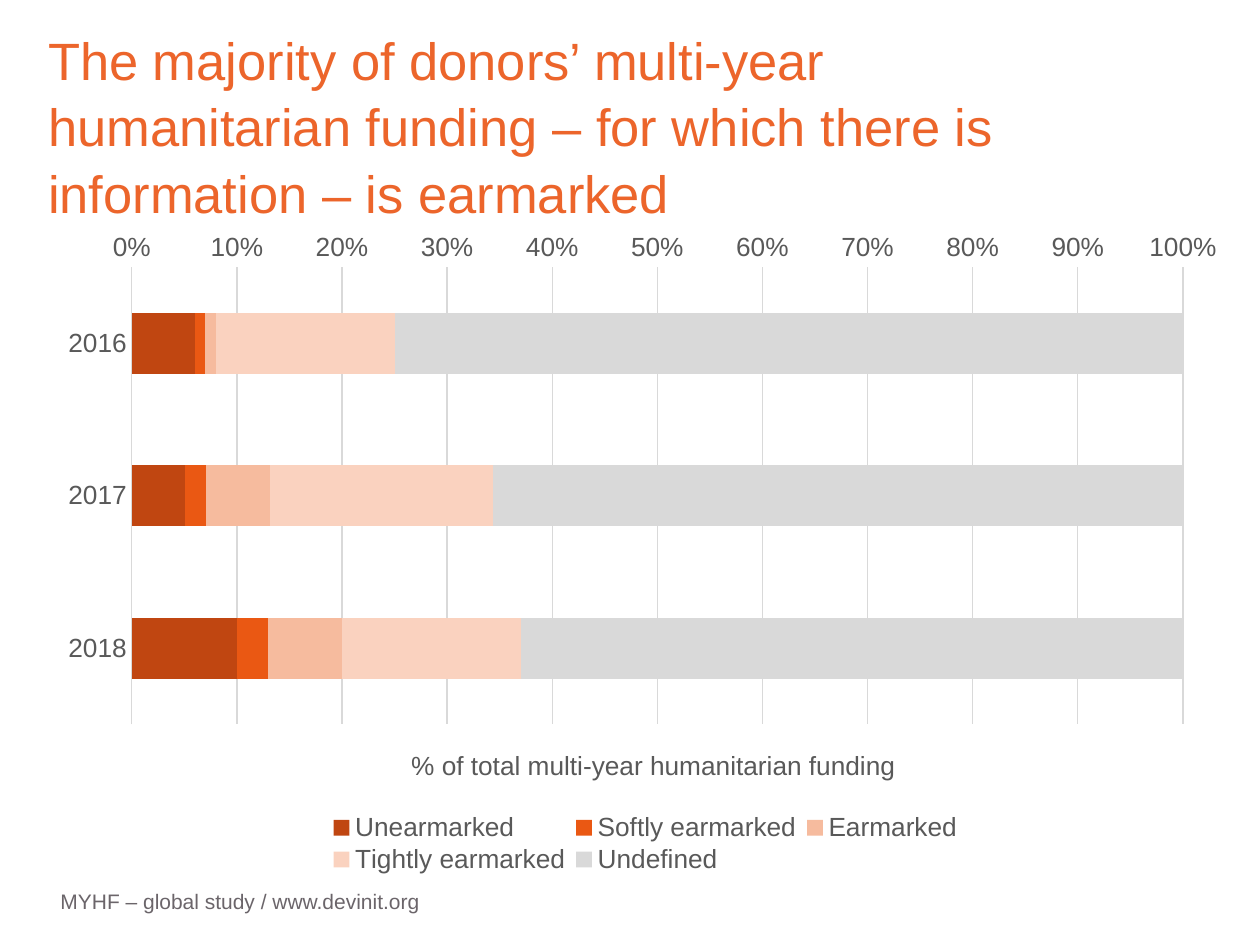
from lxml import etree
from pptx import Presentation, util as u
from pptx.chart.data import CategoryChartData
from pptx.dml.color import RGBColor
from pptx.enum import chart as charts, text
from pptx.oxml.ns import qn

FONT = "Arial"
GREY = "595959"
PALE_GREY = "D9D9D9"
YEARS = ["2016", "2017", "2018"]
FUNDING = [
    ("Unearmarked", (6, 5, 10), "C04611"),
    ("Softly earmarked", (1, 2, 3), "EA5813"),
    ("Earmarked", (1, 6, 7), "F6BB9E"),
    ("Tightly earmarked", (17, 21, 17), "FAD2BF"),
    ("Undefined", (75, 65, 63), PALE_GREY),
]


def colour(value):
    return RGBColor.from_string(value)


def assign(target, **values):
    for name, value in values.items():
        setattr(target, name, value)


def style_font(font, size, hex_value):
    assign(font, name=FONT, size=u.Pt(size), bold=False)
    font.color.rgb = colour(hex_value)


def style_line(line, hex_value):
    line.width = u.Pt(0.75)
    line.color.rgb = colour(hex_value)


def place_part(element, index, **fractions):
    """Fix a chart part at fractions of the chart area."""
    for old in element.findall(qn("c:layout")):
        element.remove(old)
    layout = etree.Element(qn("c:layout"))
    manual = etree.SubElement(layout, qn("c:manualLayout"))
    if "w" in fractions and index == 0:
        etree.SubElement(manual, qn("c:layoutTarget")).set("val", "inner")
    for mode in ("xMode", "yMode"):
        etree.SubElement(manual, qn("c:" + mode)).set("val", "edge")
    for name, value in fractions.items():
        etree.SubElement(manual, qn("c:" + name)).set("val", str(value))
    element.insert(index, layout)


def add_text(page, box, words, size, hex_value, line_spacing=1.0, **frame_format):
    frame = page.shapes.add_textbox(*map(u.Cm, box)).text_frame
    assign(frame, word_wrap=True, **frame_format)
    para = frame.paragraphs[0]
    para.line_spacing = line_spacing
    span = para.add_run()
    span.text = words
    style_font(span.font, size, hex_value)


def add_funding_chart(page, box):
    data = CategoryChartData(number_format="0")
    data.categories = YEARS
    for name, values, _ in FUNDING:
        data.add_series(name, values)
    chart = page.shapes.add_chart(
        charts.XL_CHART_TYPE.BAR_STACKED_100, *map(u.Cm, box), data).chart
    chart.has_title = False
    style_font(chart.font, 15, GREY)

    # Bars
    plot = chart.plots[0]
    assign(plot, gap_width=150, overlap=100, vary_by_categories=False)
    for series, (_, _, fill) in zip(plot.series, FUNDING):
        series.format.fill.solid()
        series.format.fill.fore_color.rgb = colour(fill)
    place_part(chart._chartSpace.chart.plotArea, 0, x=0.07, y=0.07, w=0.88, h=0.69)

    # Axes
    years, share = chart.category_axis, chart.value_axis
    for axis in (years, share):
        assign(axis, major_tick_mark=charts.XL_TICK_MARK.NONE,
               minor_tick_mark=charts.XL_TICK_MARK.NONE)
        style_font(axis.tick_labels.font, 15, GREY)
    years.reverse_order = True
    style_line(years.format.line, PALE_GREY)
    share.has_major_gridlines = True
    style_line(share.major_gridlines.format.line, PALE_GREY)
    share.format.line.fill.background()
    assign(share.tick_labels, number_format="0%", number_format_is_linked=False)

    # Axis title below the bars
    title = share.axis_title
    para = title.text_frame.paragraphs[0]
    span = para.add_run()
    span.text = "% of total multi-year humanitarian funding"
    style_font(span.font, 15, GREY)
    place_part(title._element, 1, x=0.3, y=0.79)

    # Legend
    chart.has_legend = True
    legend = chart.legend
    assign(legend, position=charts.XL_LEGEND_POSITION.BOTTOM, include_in_layout=False)
    style_font(legend.font, 15, GREY)
    place_part(legend._element, 1, x=0.23, y=0.89, w=0.54, h=0.1)


def build_slide(deck):
    page = deck.slides.add_slide(deck.slide_layouts[6])
    # Footer
    add_text(page, (0.97, 17.65, 18.59, 1.02), "MYHF – global study / www.devinit.org",
             12, "6B656A", vertical_anchor=text.MSO_ANCHOR.MIDDLE)
    # Heading
    add_text(page, (0.97, 0.51, 21.41, 4.09),
             "The majority of donors’ multi-year humanitarian funding – "
             "for which there is information – is earmarked",
             30, "EC652B", line_spacing=1.05, vertical_anchor=text.MSO_ANCHOR.TOP,
             margin_left=0, margin_right=0, margin_top=0, margin_bottom=0)
    add_funding_chart(page, (0.97, 4.45, 24.08, 13.36))


def main():
    deck = Presentation()
    assign(deck, slide_width=u.Cm(25.4), slide_height=u.Cm(19.05))
    build_slide(deck)
    deck.save("out.pptx")


if __name__ == "__main__":
    main()
